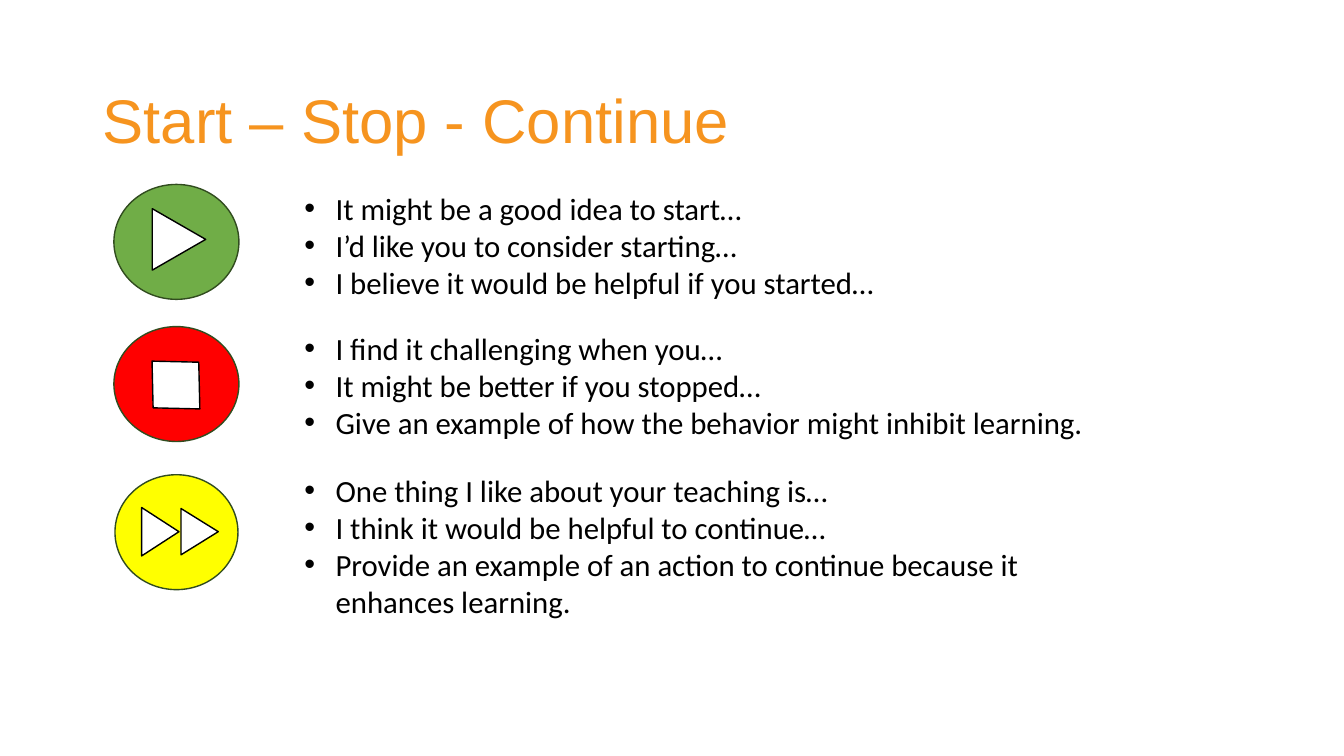
from lxml import etree
from pptx import Presentation
from pptx.dml import color
from pptx.enum import shapes, text
from pptx.oxml import ns
from pptx.util import Inches, Pt

TITLE = "Start – Stop - Continue"
GREEN, RED, YELLOW = "70AD47", "FF0000", "FFFF00"
WHITE, BLACK, ORANGE, DARK_GREEN = "FFFFFF", "000000", "F6941F", "314C1F"
PLAY = shapes.MSO_SHAPE.ISOSCELES_TRIANGLE
STOP = shapes.MSO_SHAPE.DIAMOND
BUTTON = shapes.MSO_SHAPE.FLOWCHART_CONNECTOR

# Each row: button box and colour, white symbols (preset, box, rotation), list box, list items
ROWS = [
    ((1.13, 1.83, 1.24, 1.14), GREEN,
     [(PLAY, (1.47, 2.11, 0.61, 0.53), 90)],
     (2.92, 1.83, 6.11, 1.21),
     ["It might be a good idea to start…",
      "I’d like you to consider starting…",
      "I believe it would be helpful if you started…"]),
    ((1.13, 3.24, 1.24, 1.14), RED,
     [(STOP, (1.41, 3.5, 0.67, 0.64), 45)],
     (2.92, 3.22, 8.08, 1.21),
     ["I find it challenging when you…",
      "It might be better if you stopped…",
      "Give an example of how the behavior might inhibit learning."]),
    ((1.14, 4.71, 1.22, 1.14), YELLOW,
     [(PLAY, (1.75, 5.09, 0.46, 0.37), 90),
      (PLAY, (1.35, 5.09, 0.48, 0.37), 90)],
     (2.92, 4.63, 8.08, 1.58),
     ["One thing I like about your teaching is…",
      "I think it would be helpful to continue…",
      "Provide an example of an action to continue because it enhances learning."]),
]


def rgb(hex_string):
    return color.RGBColor.from_string(hex_string)


def inches(box):
    return [Inches(length) for length in box]


def apply(target, formats):
    """Set every attribute named in formats on target."""
    for name, value in formats.items():
        setattr(target, name, value)


class SlideBuilder:
    title_font = {"name": "Arial", "size": Pt(44)}
    list_font = {"name": "Calibri", "size": Pt(22)}
    indent = Inches(0.31)

    def __init__(self, slide):
        self.slide = slide

    def title(self, wording, box):
        shape = self.slide.shapes.title
        apply(shape, dict(zip(("left", "top", "width", "height"), inches(box))))
        frame = shape.text_frame
        frame.text = wording
        apply(frame, {"vertical_anchor": text.MSO_ANCHOR.MIDDLE, "word_wrap": True})
        paragraph = frame.paragraphs[0]
        apply(paragraph, {"alignment": text.PP_ALIGN.LEFT, "line_spacing": 0.9})
        apply(paragraph.font, self.title_font)
        paragraph.font.color.rgb = rgb(ORANGE)

    def symbol(self, preset, box, fill, line, rotation=0):
        shape = self.slide.shapes.add_shape(preset, *inches(box))
        shape.rotation = rotation
        shape.shadow.inherit = False
        shape.fill.solid()
        shape.fill.fore_color.rgb = rgb(fill)
        shape.line.color.rgb = rgb(line)
        shape.line.width = Pt(1)

    def bullet_list(self, items, box):
        frame = self.slide.shapes.add_textbox(*inches(box)).text_frame
        apply(frame, {"word_wrap": True, "auto_size": text.MSO_AUTO_SIZE.SHAPE_TO_FIT_TEXT})
        frame.text = "\n".join(items)
        for paragraph in frame.paragraphs:
            self.add_bullet(paragraph)
            apply(paragraph.font, self.list_font)
            paragraph.font.color.rgb = rgb(BLACK)

    def add_bullet(self, paragraph):
        properties = paragraph._p.get_or_add_pPr()
        properties.set("marL", str(self.indent))
        properties.set("indent", str(-self.indent))
        etree.SubElement(properties, ns.qn("a:buFont"), typeface="Arial")
        etree.SubElement(properties, ns.qn("a:buChar"), char="•")


def main():
    presentation = Presentation()
    presentation.slide_width = Inches(13.33)
    presentation.slide_height = Inches(7.5)
    title_only = presentation.slide_layouts.get_by_name("Title Only")
    builder = SlideBuilder(presentation.slides.add_slide(title_only))

    builder.title(TITLE, (0.92, 0.5, 11.5, 1.45))
    for button_box, button_fill, symbols, list_box, items in ROWS:
        builder.symbol(BUTTON, button_box, button_fill, DARK_GREEN)
        for preset, box, rotation in symbols:
            builder.symbol(preset, box, WHITE, BLACK, rotation)
        builder.bullet_list(items, list_box)
    presentation.save("out.pptx")


if __name__ == "__main__":
    main()
